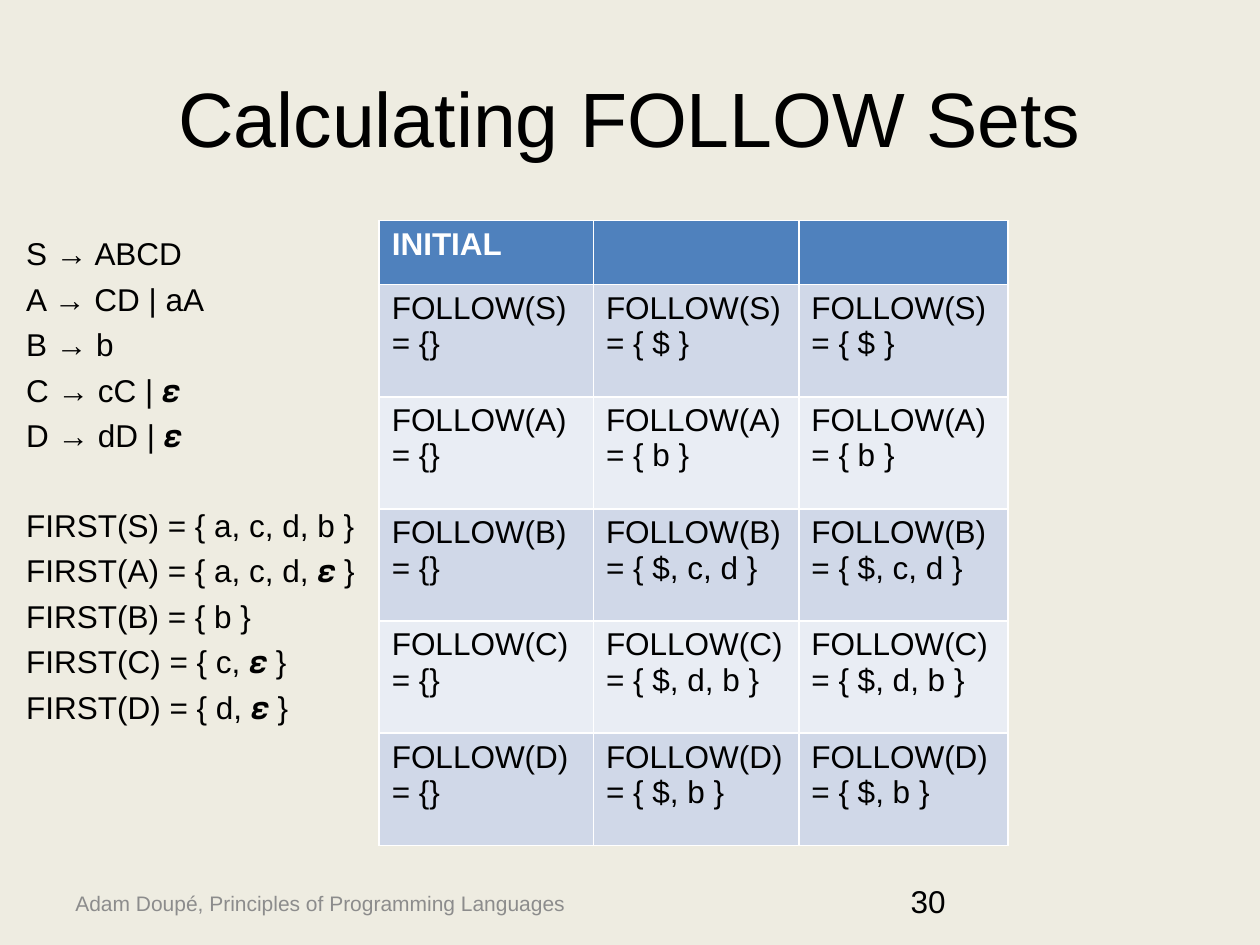
"""Build the slide on calculating FOLLOW sets."""
from pptx import Presentation
from pptx.dml.color import RGBColor
from pptx.enum.text import MSO_ANCHOR, PP_ALIGN
from pptx.util import Inches, Pt

MIDDLE, TOP = MSO_ANCHOR.MIDDLE, MSO_ANCHOR.TOP
LEFT, CENTER = PP_ALIGN.LEFT, PP_ALIGN.CENTER
BLACK = RGBColor(0x00, 0x00, 0x00)
WHITE = RGBColor(0xFF, 0xFF, 0xFF)
GRAY = RGBColor(0x8C, 0x8C, 0x8C)
CREAM = RGBColor(0xEE, 0xEC, 0xE1)
BLUE = RGBColor(0x4F, 0x81, 0xBD)
BANDS = [RGBColor(0xD0, 0xD8, 0xE8), RGBColor(0xE9, 0xED, 0xF4)]

TITLE = "Calculating FOLLOW Sets"
FOOTER = "Adam Doupé, Principles of Programming Languages"
PAGE = "30"
GRAMMAR = ["S → ABCD", "A → CD | aA", "B → b", "C → cC | 𝜺", "D → dD | 𝜺"]
FIRST = [
    "FIRST(S) = { a, c, d, b }",
    "FIRST(A) = { a, c, d, 𝜺 }",
    "FIRST(B) = { b }",
    "FIRST(C) = { c, 𝜺 }",
    "FIRST(D) = { d, 𝜺 }",
]
HEADER = ["INITIAL", "", ""]
FOLLOW = {
    "S": ["{}", "{ $ }", "{ $ }"],
    "A": ["{}", "{ b }", "{ b }"],
    "B": ["{}", "{ $, c, d }", "{ $, c, d }"],
    "C": ["{}", "{ $, d, b }", "{ $, d, b }"],
    "D": ["{}", "{ $, b }", "{ $, b }"],
}
COL_WIDTHS = [1.7, 1.63, 1.66]
HEADER_HEIGHT, ROW_HEIGHT = 0.51, 0.89
LINE_GAP, GROUP_GAP = 4.4, 29.5


def write(tf, lines, size=18, color=BLACK, bold=False, align=LEFT):
    """Fill a text frame with one paragraph per line."""
    for i, line in enumerate(lines):
        p = tf.paragraphs[0] if i == 0 else tf.add_paragraph()
        p.text = line
        p.alignment = align
        fmt = {"name": "Arial", "size": Pt(size), "bold": bold}
        for name, value in fmt.items():
            setattr(p.font, name, value)
        p.font.color.rgb = color


def add_text(s, box, lines, anchor=TOP, **fmt):
    """Add a wrapping text box and return its text frame."""
    tf = s.shapes.add_textbox(*map(Inches, box)).text_frame
    tf.word_wrap = True
    tf.vertical_anchor = anchor
    write(tf, lines, **fmt)
    return tf


def add_follow_table(s):
    """Add the table with one banded row per nonterminal."""
    rows = [HEADER] + [
        [f"FOLLOW({symbol}) = {value}" for value in values]
        for symbol, values in FOLLOW.items()
    ]
    heights = [HEADER_HEIGHT] + [ROW_HEIGHT] * len(FOLLOW)
    box = (3.01, 1.75, sum(COL_WIDTHS), sum(heights))
    table = s.shapes.add_table(len(rows), len(HEADER), *map(Inches, box)).table
    for col, width in zip(table.columns, COL_WIDTHS):
        col.width = Inches(width)
    for r, (values, height) in enumerate(zip(rows, heights)):
        table.rows[r].height = Inches(height)
        head = r == 0
        for c, value in enumerate(values):
            cell = table.cell(r, c)
            cell.fill.solid()
            cell.fill.fore_color.rgb = BLUE if head else BANDS[(r - 1) % 2]
            write(cell.text_frame, [value], color=WHITE if head else BLACK, bold=head)


def main():
    prs = Presentation()
    prs.slide_width, prs.slide_height = Inches(10), Inches(7.5)
    s = prs.slides.add_slide(prs.slide_layouts[5])
    s.background.fill.solid()
    s.background.fill.fore_color.rgb = CREAM

    title = s.shapes.title
    title.left, title.top, title.width, title.height = map(Inches, (0.5, 0.3, 9, 1.25))
    title.text_frame.vertical_anchor = MIDDLE
    write(title.text_frame, [TITLE], size=44, align=CENTER)

    add_text(s, (0.5, 6.97, 4.26, 0.4), [FOOTER], MIDDLE, size=12, color=GRAY)
    add_text(s, (7.13, 6.95, 2.33, 0.4), [PAGE])
    tf = add_text(s, (0.11, 1.75, 9.39, 4.95), GRAMMAR + FIRST)
    tf.margin_top = Inches(0.11)
    for i, p in enumerate(tf.paragraphs[1:], 1):
        p.space_before = Pt(GROUP_GAP if i == len(GRAMMAR) else LINE_GAP)
    add_follow_table(s)
    prs.save("out.pptx")


if __name__ == "__main__":
    main()
